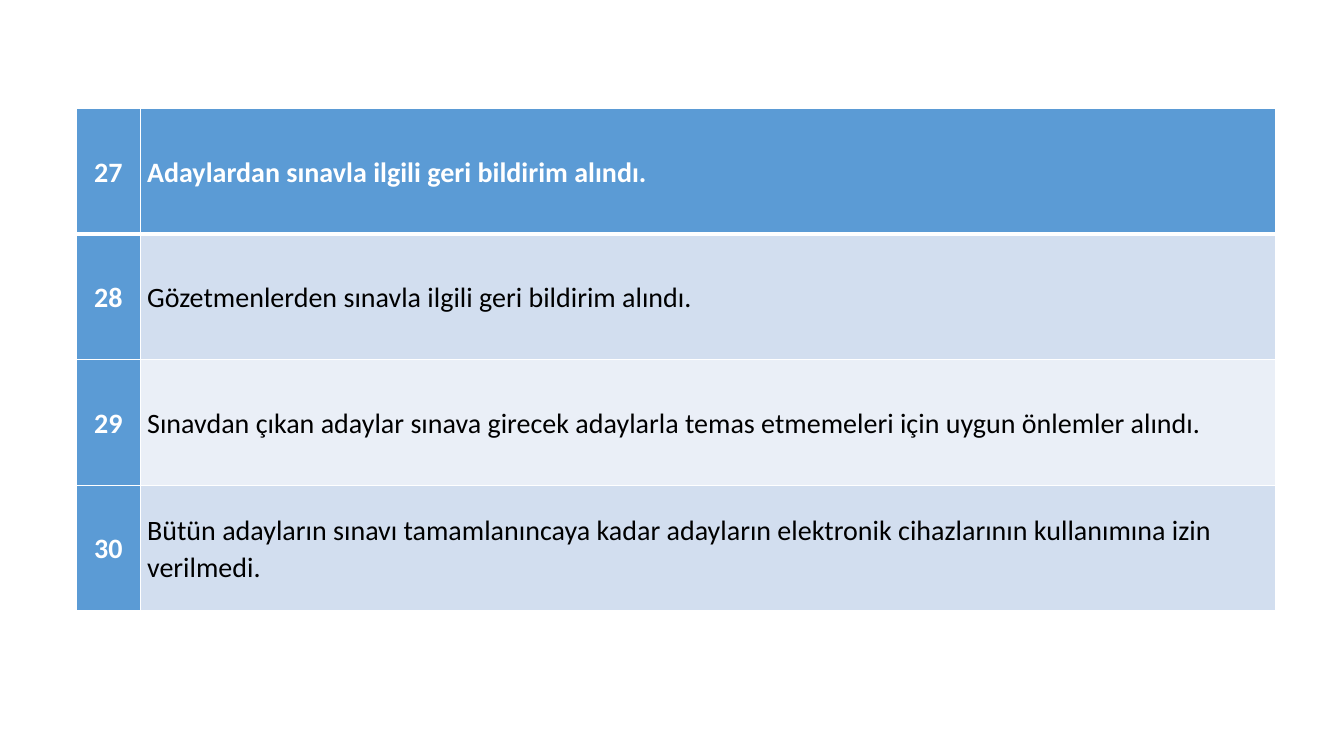
from lxml.etree import SubElement
from pptx import Presentation
from pptx.dml.color import RGBColor
from pptx.enum.text import MSO_ANCHOR, PP_ALIGN
from pptx.oxml.ns import qn
from pptx.util import Inches, Pt

COLORS = {
    "white": "FFFFFF",
    "black": "000000",
    "blue": "5B9BD5",
    "band_dark": "D2DEEF",
    "band_light": "EAEFF7",
}

CHECKLIST = [
    ("27", "Adaylardan sınavla ilgili geri bildirim alındı."),
    ("28", "Gözetmenlerden sınavla ilgili geri bildirim alındı."),
    ("29", "Sınavdan çıkan adaylar sınava girecek adaylarla temas etmemeleri "
           "için uygun önlemler alındı."),
    ("30", "Bütün adayların sınavı tamamlanıncaya kadar adayların elektronik "
           "cihazlarının kullanımına izin verilmedi."),
]


def write_text(text_frame, text, *, font, size, color, bold=False,
               align=PP_ALIGN.LEFT):
    paragraph = text_frame.paragraphs[0]
    paragraph.alignment = align
    paragraph.line_spacing = 1.07
    paragraph.space_after = Pt(8)
    run = paragraph.add_run()
    run.text = text
    run.font.name = font
    run.font.size = Pt(size)
    run.font.bold = bold
    run.font.color.rgb = RGBColor.from_string(COLORS[color])


class SlideBuilder:
    font = "Calibri"
    size = 20

    def __init__(self, slide):
        self.slide = slide

    def border(self, cell, side, width):
        line = SubElement(cell._tc.get_or_add_tcPr(), qn(f"a:ln{side}"),
                          w=str(Pt(width)))
        fill = SubElement(line, qn("a:solidFill"))
        SubElement(fill, qn("a:srgbClr"), val=COLORS["white"])

    def cell(self, cell, text, fill, color, bold, align, top, bottom):
        cell.margin_left = cell.margin_right = Inches(0.07)
        cell.margin_top = cell.margin_bottom = 0
        cell.vertical_anchor = MSO_ANCHOR.MIDDLE
        # Borders come before the fill in the cell properties
        for side, width in (("L", 1), ("R", 1), ("T", top), ("B", bottom)):
            self.border(cell, side, width)
        cell.fill.solid()
        cell.fill.fore_color.rgb = RGBColor.from_string(COLORS[fill])
        write_text(cell.text_frame, text, font=self.font, size=self.size,
                   color=color, bold=bold, align=align)

    def checklist(self, rows, left, top, column_widths, height):
        table = self.slide.shapes.add_table(
            len(rows), len(column_widths), Inches(left), Inches(top),
            Inches(sum(column_widths)), Inches(height)).table
        for column, width in zip(table.columns, column_widths):
            column.width = Inches(width)
        for row_index, texts in enumerate(rows):
            table.rows[row_index].height = Inches(height / len(rows))
            band = "band_dark" if row_index % 2 else "band_light"
            for column_index, text in enumerate(texts):
                # The first row and the number column are emphasised
                strong = row_index == 0 or column_index == 0
                self.cell(
                    table.cell(row_index, column_index), text,
                    fill="blue" if strong else band,
                    color="white" if strong else "black",
                    bold=strong,
                    align=PP_ALIGN.LEFT if column_index else PP_ALIGN.CENTER,
                    top=3 if row_index == 1 else 1,
                    bottom=3 if row_index == 0 else 1)


def main():
    presentation = Presentation()
    presentation.slide_width = Inches(13.33)
    presentation.slide_height = Inches(7.5)
    slide = presentation.slides.add_slide(presentation.slide_layouts[6])

    # Exam checklist
    SlideBuilder(slide).checklist(CHECKLIST, left=0.76, top=1.08,
                                  column_widths=(0.63, 11.26), height=4.98)

    presentation.save("out.pptx")


if __name__ == "__main__":
    main()
